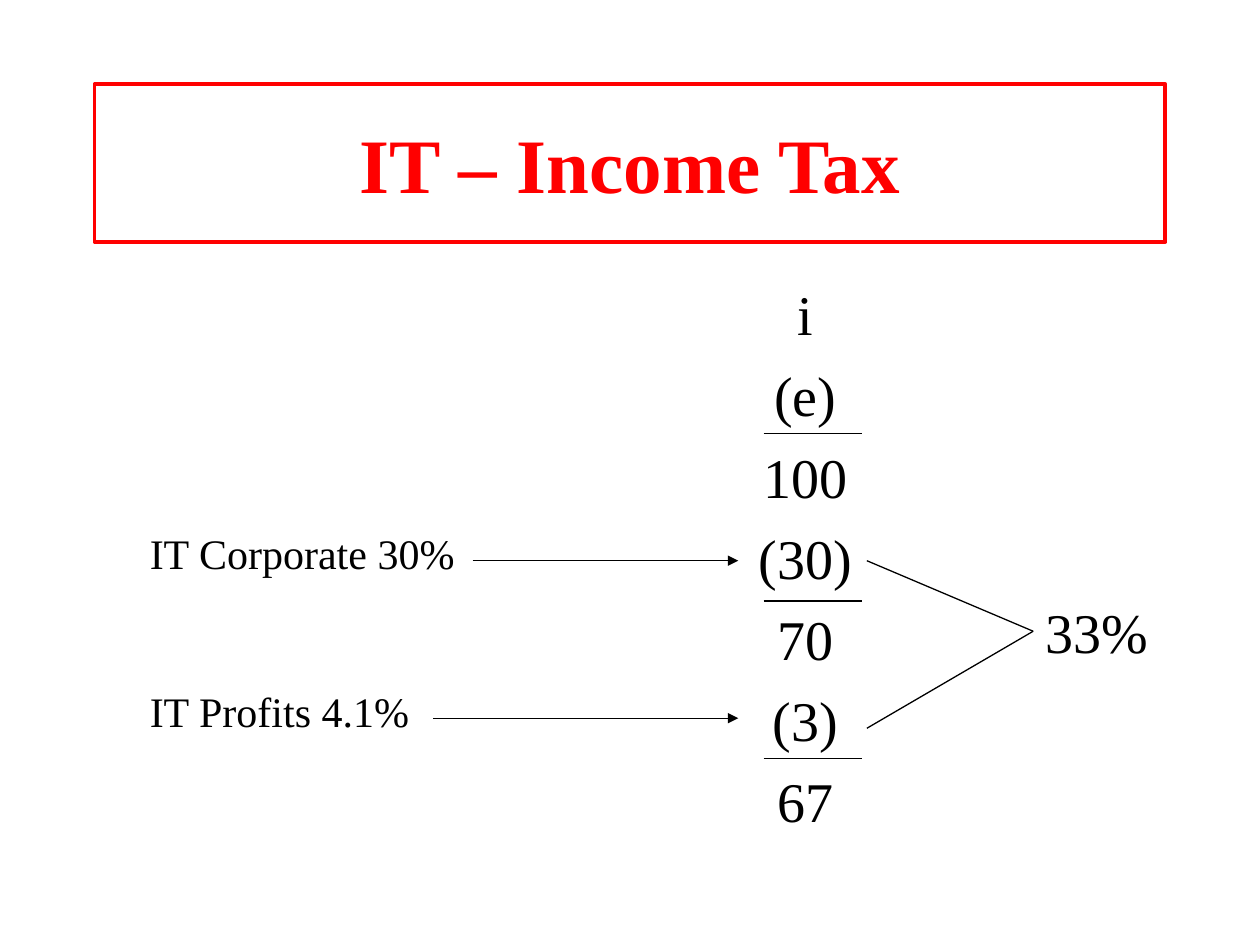
from dataclasses import dataclass
from lxml import etree
from pptx import Presentation
from pptx.dml.color import RGBColor
from pptx.enum.shapes import MSO_CONNECTOR
from pptx.enum.text import MSO_ANCHOR, MSO_AUTO_SIZE, PP_ALIGN
from pptx.oxml.ns import qn
from pptx.util import Inches, Pt

LINE = MSO_CONNECTOR.STRAIGHT
LEFT, CENTER = PP_ALIGN.LEFT, PP_ALIGN.CENTER
TOP, MIDDLE = MSO_ANCHOR.TOP, MSO_ANCHOR.MIDDLE
FIXED, GROW = MSO_AUTO_SIZE.NONE, MSO_AUTO_SIZE.SHAPE_TO_FIT_TEXT
BLACK, RED = "000000", "FF0000"
COLS, ROWS = 100, 75
WIDE, HIGH = Inches(10), Inches(7.5)
FACE = "Times New Roman"


@dataclass
class Box:
    col: float
    row: float
    cols: float
    rows: float


@dataclass
class Label:
    text: str
    box: Box
    size: int


@dataclass
class Stroke:
    start: tuple[float, float]
    end: tuple[float, float]
    arrow: bool = False


TITLE = Box(7.5, 6.7, 85, 12.5)
BODY = Box(39.5, 21.7, 48.8, 45)
STEPS = ["i", "(e)", "100", "(30)", "70", "(3)", "67"]
LABELS = [
    Label("IT Corporate 30%", Box(10.9, 41.4, 28.1, 5), 24),
    Label("IT Profits 4.1%", Box(10.9, 53.9, 35.2, 5), 24),
]
TOTAL = Label("33%", Box(82, 46.9, 10.2, 6.4), 32)
RULES = [Stroke((60.6, row), (68.4, row)) for row in (34.4, 47.7, 60.2)]
ARROWS = [Stroke((col, row), (58.6, row), True)
          for col, row in ((37.5, 44.5), (34.4, 57))]
JOINS = [Stroke((68.8, row), (82, 50.1)) for row in (44.5, 57.8)]


def color(code: str) -> RGBColor:
    return RGBColor.from_string(code)


def across(col: float) -> int:
    return round(WIDE * col / COLS)


def down(row: float) -> int:
    return round(HIGH * row / ROWS)


def place(shape, box: Box) -> None:
    spots = {"left": across(box.col), "top": down(box.row),
             "width": across(box.cols), "height": down(box.rows)}
    for name, value in spots.items():
        setattr(shape, name, value)


def style(para, size: int, code: str, bold: bool, align) -> None:
    looks = {"name": FACE, "size": Pt(size), "bold": bold}
    para.alignment = align
    for run in para.runs:
        for name, value in looks.items():
            setattr(run.font, name, value)
        run.font.color.rgb = color(code)


def write(shape, lines: list[str], size: int, code: str = BLACK,
          bold: bool = False, align=LEFT, anchor=TOP,
          wrap: bool = True, fit=FIXED) -> None:
    frame = shape.text_frame
    frame.text = "\n".join(lines)
    setup = {"vertical_anchor": anchor, "word_wrap": wrap, "auto_size": fit}
    for name, value in setup.items():
        setattr(frame, name, value)
    for para in frame.paragraphs:
        style(para, size, code, bold, align)


def add_label(slide, label: Label):
    shape = slide.shapes.add_textbox(0, 0, 0, 0)
    write(shape, [label.text], label.size, wrap=False, fit=GROW)
    place(shape, label.box)
    return shape


def add_line(slide, stroke: Stroke):
    (left, top), (right, low) = stroke.start, stroke.end
    line = slide.shapes.add_connector(
        LINE, across(left), down(top), across(right), down(low))
    line.line.color.rgb = color(BLACK)
    line.line.width = Pt(0.75)
    if stroke.arrow:
        etree.SubElement(line.line._get_or_add_ln(), qn("a:tailEnd"),
                         type="triangle")
    etree.SubElement(line._element.spPr, qn("a:effectLst"))
    return line


def add_title(slide) -> None:
    title = slide.shapes.title
    place(title, TITLE)
    title.line.color.rgb = color(RED)
    title.line.width = Pt(2.25)
    write(title, ["IT – Income Tax"], 44, RED, True, CENTER, MIDDLE)


def add_steps(slide) -> None:
    body = slide.placeholders[1]
    place(body, BODY)
    write(body, STEPS, 32, align=CENTER)
    for spot, para in enumerate(body.text_frame.paragraphs):
        para.space_before = Pt(8 if spot else 0)
        props = para._p.get_or_add_pPr()
        props.set("marL", str(Inches(0.38)))
        props.set("indent", str(Inches(-0.38)))
        etree.SubElement(props, qn("a:buNone"))


def main() -> None:
    deck = Presentation()
    deck.slide_width, deck.slide_height = WIDE, HIGH
    slide = deck.slides.add_slide(deck.slide_layouts[1])
    add_title(slide)
    add_steps(slide)
    for label in LABELS:
        add_label(slide, label)
    total = add_label(slide, TOTAL)
    for stroke in RULES + ARROWS:
        add_line(slide, stroke)
    for stroke in JOINS:
        add_line(slide, stroke).end_connect(total, 1)
    deck.save("out.pptx")


if __name__ == "__main__":
    main()
